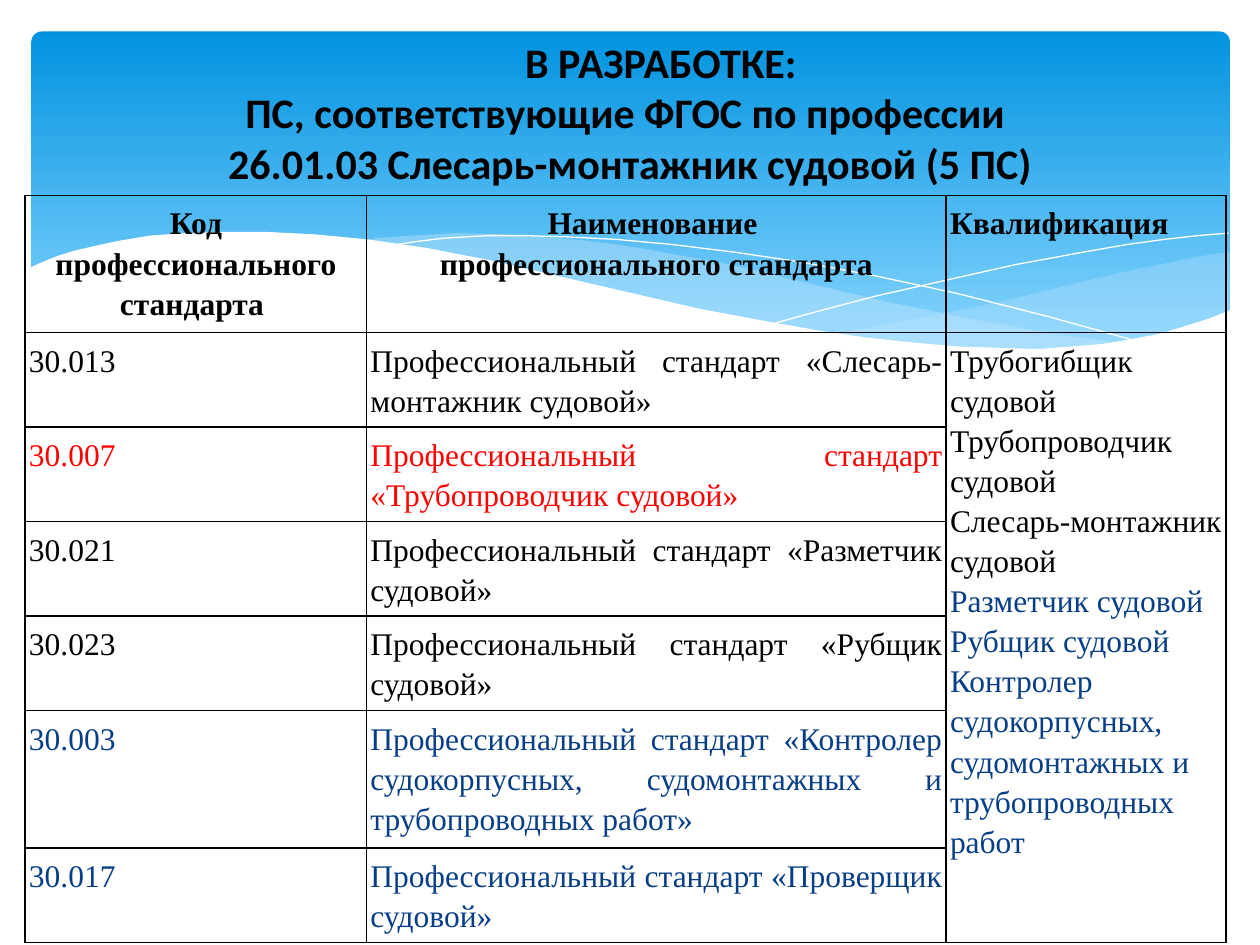
from lxml import etree
from pptx import Presentation
from pptx.dml.color import RGBColor
from pptx.enum.shapes import MSO_SHAPE as Shape
from pptx.enum.text import MSO_ANCHOR as Anchor, PP_ALIGN as Align
from pptx.oxml.ns import qn
from pptx.util import Inches, Pt

BLACK, RED, BLUE, WHITE, PALE = "000000", "FF0000", "073E87", "FFFFFF", "C6E7FC"

# Wave outlines, in inches from the left top of the banner
RIGHT_WAVE = [
    (9.5, 1.75), (9.23, 1.79), (8.96, 1.85), (8.66, 1.91), (8.36, 1.98),
    (7.8, 2.12), (7.28, 2.23), (6.81, 2.32), (6.36, 2.4), (6.66, 2.44),
    (6.94, 2.47), (7.2, 2.5), (7.44, 2.52), (7.78, 2.53), (8.1, 2.52),
    (8.38, 2.5), (8.64, 2.47), (8.88, 2.42), (9.1, 2.37), (9.24, 2.32),
    (9.51, 2.22), (9.51, 1.75)]
MIDDLE_WAVE = [
    (8.68, 2.48), (8.41, 2.44), (8.12, 2.4), (7.5, 2.29), (6.81, 2.15),
    (6.04, 1.97), (5.73, 1.89), (5.44, 1.83), (5.16, 1.78), (4.89, 1.73),
    (4.64, 1.69), (4.4, 1.66), (4.17, 1.64), (3.74, 1.61), (3.36, 1.6),
    (3.03, 1.62), (2.74, 1.64), (2.61, 1.66), (2.98, 1.71), (3.37, 1.78),
    (3.79, 1.86), (4.24, 1.97), (5.05, 2.15), (5.59, 2.27), (5.93, 2.33),
    (6.25, 2.39), (6.55, 2.43), (6.84, 2.47), (7.11, 2.5), (7.36, 2.52),
    (7.6, 2.53), (7.93, 2.53), (8.23, 2.52), (8.51, 2.5)]
FALLING_LINE = [
    (2.84, 1.7), (3.03, 1.67), (3.28, 1.64), (3.62, 1.62), (3.91, 1.62),
    (4.25, 1.63), (4.64, 1.65), (5.08, 1.69), (5.57, 1.75), (6.11, 1.83),
    (6.7, 1.94), (7.35, 2.08), (8.06, 2.26), (8.82, 2.47)]
RISING_LINE = [
    (5.88, 2.32), (6.28, 2.21), (6.7, 2.1), (7.23, 1.98), (7.81, 1.85),
    (8.41, 1.74), (8.7, 1.69), (8.99, 1.65), (9.26, 1.62), (9.5, 1.6)]
WHITE_WAVE = [
    (9.52, 2.21), (9.34, 2.28), (9.15, 2.34), (8.95, 2.4), (8.74, 2.44),
    (8.5, 2.48), (8.25, 2.5), (7.98, 2.52), (7.68, 2.51), (7.36, 2.5),
    (7.01, 2.47), (6.63, 2.43), (6.23, 2.37), (5.78, 2.29), (5.3, 2.2),
    (4.78, 2.08), (4.22, 1.95), (3.66, 1.82), (3.15, 1.72), (2.67, 1.65),
    (2.25, 1.61), (1.86, 1.59), (1.52, 1.59), (1.21, 1.6), (0.94, 1.62),
    (0.7, 1.66), (0.51, 1.7), (0.34, 1.74), (0.21, 1.78), (0.11, 1.82),
    (0.04, 1.85), (-0.02, 1.88), (-0.02, 3.04), (9.52, 3.04)]

# Table content: code, standard, colour
STANDARDS = [
    ("30.013", "Слесарь-монтажник судовой", BLACK),
    ("30.007", "Трубопроводчик судовой", RED),
    ("30.021", "Разметчик судовой", BLACK),
    ("30.023", "Рубщик судовой", BLACK),
    ("30.003", "Контролер судокорпусных, судомонтажных и трубопроводных работ", BLUE),
    ("30.017", "Проверщик судовой", BLUE)]
QUALIFICATIONS = [
    ("Трубогибщик судовой Трубопроводчик судовой", BLACK),
    ("Слесарь-монтажник судовой", BLACK),
    ("Разметчик судовой", BLUE),
    ("Рубщик судовой", BLUE),
    ("Контролер судокорпусных, судомонтажных и трубопроводных работ", BLUE)]


def color(value):
    return RGBColor.from_string(value)


def add_wave(group, left, top, points, fill=None, alpha=None):
    """Filled wave, or a thin white line when no fill is given."""
    points = [(Inches(left + x), Inches(top + y)) for x, y in points]
    builder = group.shapes.build_freeform(*points[0], scale=1.0)
    builder.add_line_segments(points[1:], close=fill is not None)
    sp = builder.convert_to_shape()
    sp.shadow.inherit = False
    if fill is None:
        sp.fill.background()
        sp.line.color.rgb = color(WHITE)
        sp.line.width = Pt(0)
        return
    sp.line.fill.background()
    sp.fill.solid()
    sp.fill.fore_color.rgb = color(fill)
    if alpha:
        rgb = sp._element.spPr.find(".//" + qn("a:srgbClr"))
        etree.SubElement(rgb, qn("a:alpha"), val=str(alpha * 1000))


def add_banner(s, left, top, width, height):
    sp = s.shapes.add_shape(Shape.ROUNDED_RECTANGLE, Inches(left), Inches(top),
                            Inches(width), Inches(height))
    sp.adjustments[0] = 0.03
    sp.shadow.inherit = False
    sp.line.fill.background()
    sp.fill.gradient()
    sp.fill.gradient_angle = 270
    for stop, position, value in zip(sp.fill.gradient_stops, (0, 0.9), ("0293E0", "83D3FE")):
        stop.position = position
        stop.color.rgb = color(value)

    group = s.shapes.add_group_shape()
    add_wave(group, left, top, RIGHT_WAVE, PALE, 29)
    add_wave(group, left, top, MIDDLE_WAVE, PALE, 40)
    add_wave(group, left, top, FALLING_LINE)
    add_wave(group, left, top, RISING_LINE)
    add_wave(group, left, top, WHITE_WAVE, WHITE)


def style_cell(cell):
    """Clear fill, narrow margins and black borders on all sides."""
    cell.margin_left = cell.margin_right = Inches(0.03)
    cell.margin_top = cell.margin_bottom = Inches(0.05)
    props = cell._tc.get_or_add_tcPr()
    for side in ("lnL", "lnR", "lnT", "lnB"):
        ln = etree.SubElement(props, qn("a:" + side), w=str(Pt(1)))
        fill = etree.SubElement(ln, qn("a:solidFill"))
        etree.SubElement(fill, qn("a:srgbClr"), val=BLACK)
    cell.fill.background()


def write_cell(cell, lines, align=Align.LEFT, bold=False):
    tf = cell.text_frame
    for i, (text, value) in enumerate(lines):
        p = tf.paragraphs[0] if i == 0 else tf.add_paragraph()
        p.text = text
        p.alignment = align
        p.line_spacing = 1.15
        p.font.name = "Times New Roman"
        p.font.size = Pt(18)
        p.font.bold = bold
        p.font.color.rgb = color(value)


def add_standards_table(s, left, top, width, height):
    col_widths = (2.71, 4.6, width - 7.31)
    row_heights = (1.09, 0.75, 0.75, 0.75, 0.75, 1.09, 0.75)
    frame = s.shapes.add_table(len(row_heights), len(col_widths), Inches(left),
                               Inches(top), Inches(width), Inches(height))
    table = frame.table
    table.first_row = table.horz_banding = False
    for column, size in zip(table.columns, col_widths):
        column.width = Inches(size)
    for row, size in zip(table.rows, row_heights):
        row.height = Inches(size)
    for cell in table.iter_cells():
        style_cell(cell)

    # Header row
    headers = [
        (("Код", "профессионального стандарта "), Align.CENTER),
        (("Наименование ", "профессионального стандарта"), Align.CENTER),
        (("Квалификация",), Align.LEFT)]
    for col, (lines, align) in enumerate(headers):
        write_cell(table.cell(0, col), [(t, BLACK) for t in lines], align, True)

    # One row per standard, with one shared cell of qualifications
    for row, (code, name, value) in enumerate(STANDARDS, 1):
        write_cell(table.cell(row, 0), [(code, value)])
        write_cell(table.cell(row, 1), [(f"Профессиональный стандарт «{name}»", value)],
                   Align.JUSTIFY)
    table.cell(1, 2).merge(table.cell(len(STANDARDS), 2))
    write_cell(table.cell(1, 2), QUALIFICATIONS)


def add_title(s, left, top, width, height):
    box = s.shapes.add_textbox(Inches(left), Inches(top), Inches(width), Inches(height))
    tf = box.text_frame
    tf.word_wrap = True
    tf.vertical_anchor = Anchor.MIDDLE
    tf.margin_bottom = Inches(0.38)
    p = tf.paragraphs[0]
    p.text = ("В РАЗРАБОТКЕ:\vПС, соответствующие ФГОС по профессии \v"
              "26.01.03 Слесарь-монтажник судовой (5 ПС)")
    p.alignment = Align.CENTER
    p._p.get_or_add_pPr().set("indent", str(Inches(0.49)))
    p.font.name = "Calibri"
    p.font.size = Pt(24)
    p.font.bold = True
    p.font.color.rgb = color(BLACK)


def main():
    prs = Presentation()
    prs.slide_width, prs.slide_height = Inches(10), Inches(7.5)
    s = prs.slides.add_slide(prs.slide_layouts[6])
    add_banner(s, 0.25, 0.25, 9.51, 2.7)
    add_standards_table(s, 0.2, 1.55, 9.53, 5.93)
    add_title(s, 0.5, 0.37, 9, 1.37)
    prs.save("out.pptx")


if __name__ == "__main__":
    main()
